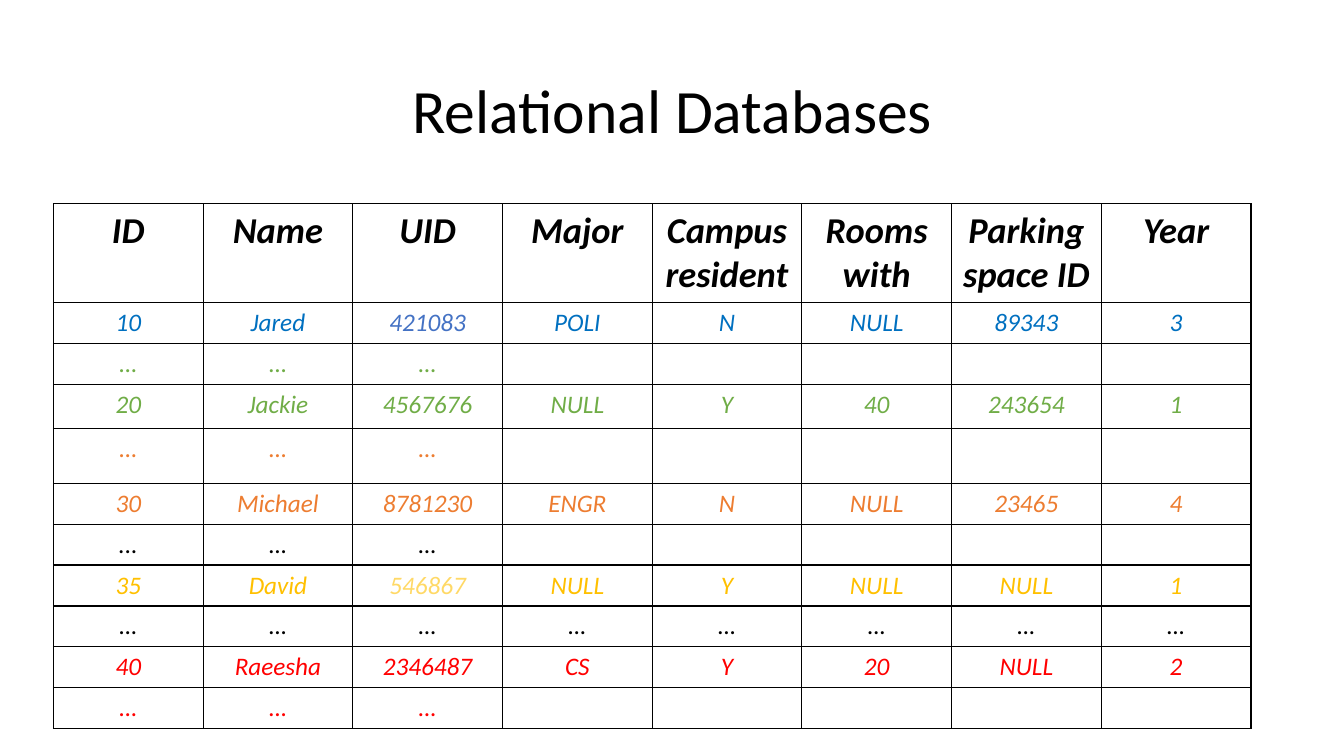
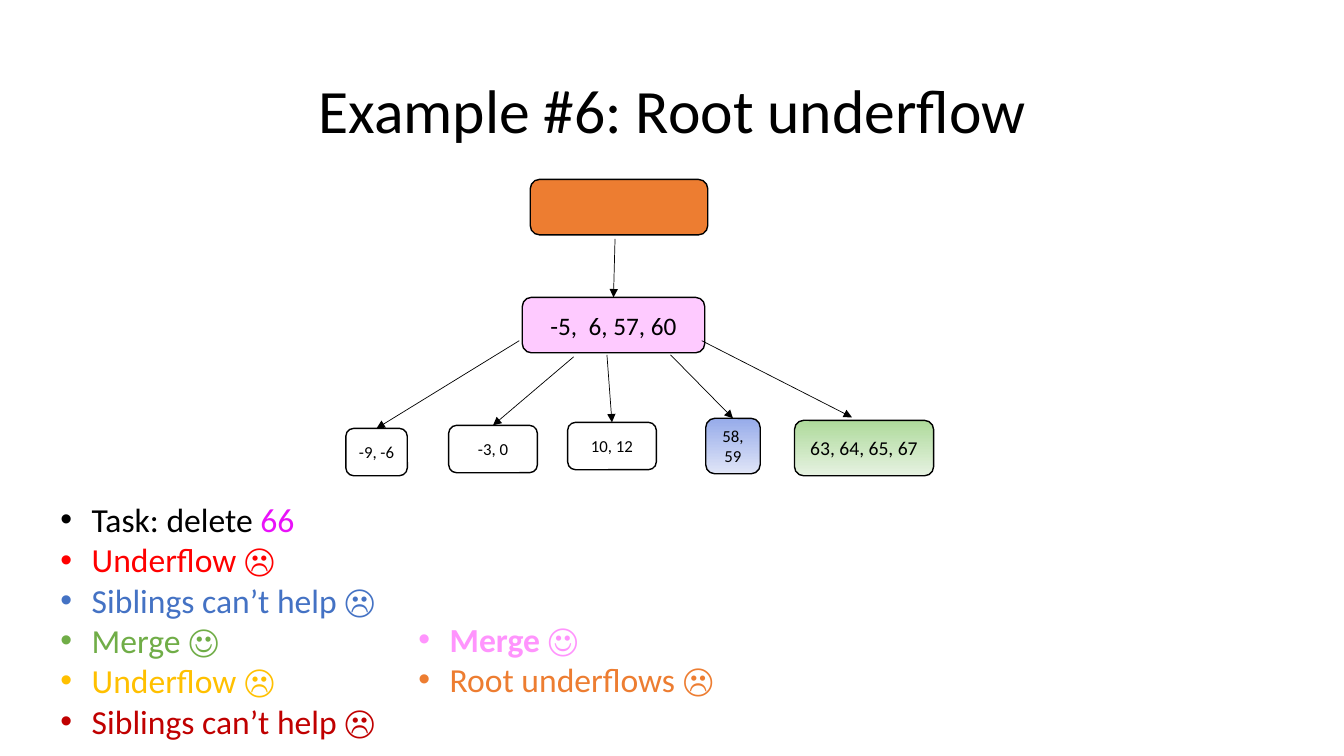
from dataclasses import dataclass
from lxml.etree import SubElement as Sub
from pptx import Presentation
from pptx.dml.color import RGBColor as Rgb
from pptx.enum.shapes import MSO_CONNECTOR as Conn, MSO_SHAPE as Geo
from pptx.enum.text import MSO_ANCHOR as Anchor, MSO_AUTO_SIZE as Auto, PP_ALIGN as Align
from pptx.oxml import parse_xml
from pptx.oxml.ns import nsdecls, qn
from pptx.util import Inches, Pt


@dataclass(frozen=True)
class Theme:
    font: str = "Calibri"
    black: str = "000000"
    sky: str = "0070C0"
    blue: str = "4472C4"
    green: str = "70AD47"
    orange: str = "ED7D31"
    gold: str = "FFC000"
    pale: str = "FFD966"
    red: str = "FF0000"
    dark: str = "C00000"
    pink: str = "FF94FD"
    rose: str = "FECAFF"
    vivid: str = "E911F9"
    fade_blue: tuple = ("96ABEA", "E0E5F7")
    fade_green: tuple = ("AEDA9B", "E6F2E1")
    title: int = 44
    head: int = 26
    list: int = 24
    body: int = 18
    leaf: int = 14
    small: int = 12


T = Theme()


def put(par, text, size, color, bold=False, italic=False):
    """Add one formatted run to a paragraph."""
    run = par.add_run()
    run.text = text
    font = run.font
    font.name, font.size = T.font, Pt(size)
    font.bold, font.italic = bold, italic
    font.color.rgb = Rgb.from_string(color)


def box(*vals):
    """Turn inches into lengths."""
    return [Inches(val) for val in vals]


deck = Presentation()
deck.slide_width, deck.slide_height = box(13.33, 7.5)

# Slides and their titles: title only, then title with two lists
pages = []
for num, text in ((5, "Relational Databases"), (3, "Example #6: Root underflow")):
    page = deck.slides.add_slide(deck.slide_layouts[num])
    title = page.shapes.title
    title.left, title.top, title.width, title.height = box(0.92, 0.4, 11.5, 1.45)
    title.text_frame.vertical_anchor = Anchor.MIDDLE
    par = title.text_frame.paragraphs[0]
    par.alignment, par.line_spacing = Align.CENTER, 0.9
    put(par, text, T.title, T.black)
    pages.append(page)
data, tree = pages

# Student table: colour and cells of each row
dots = ["…"] * 3
rows = [
    (T.black, ["ID", "Name", "UID", "Major", "Campus resident", "Rooms with",
               "Parking space ID", "Year"]),
    (T.sky, ["10", "Jared", "421083", "POLI", "N", "NULL", "89343", "3"]),
    (T.green, dots),
    (T.green, ["20", "Jackie", "4567676", "NULL", "Y", "40", "243654", "1"]),
    (T.orange, dots),
    (T.orange, ["30", "Michael", "8781230", "ENGR", "N", "NULL", "23465", "4"]),
    (T.black, ["...", "…", "…"]),
    (T.gold, ["35", "David", "546867", "NULL", "Y", "NULL", "NULL", "1"]),
    (T.black, ["…"] * 8),
    (T.red, ["40", "Raeesha", "2346487", "CS", "Y", "20", "NULL", "2"]),
    (T.red, dots),
]
tints = {(1, 2): T.blue, (7, 2): T.pale}
highs = {0: 0.98, 3: 0.44, 4: 0.54}
grid = data.shapes.add_table(len(rows), 8, *box(0.53, 2.02, 11.88, 5.19)).table
grid.first_row = grid.horz_banding = False
for col in grid.columns:
    col.width = Inches(11.88 / 8)
for r, (color, texts) in enumerate(rows):
    grid.rows[r].height = Inches(highs.get(r, 0.405))
    for c, cell in enumerate(grid.rows[r].cells):
        cell.fill.background()
        props = cell._tc.get_or_add_tcPr()
        for i, side in enumerate(("lnL", "lnR", "lnT", "lnB")):
            props.insert(i, parse_xml(
                f'<a:{side} {nsdecls("a")} w="{Pt(1)}"><a:solidFill>'
                f'<a:srgbClr val="{T.black}"/></a:solidFill></a:{side}>'))
        if c < len(texts):
            par = cell.text_frame.paragraphs[0]
            par.alignment = Align.CENTER
            put(par, texts[c], T.body if r else T.head,
                tints.get((r, c), color), bold=r == 0, italic=True)

# Tree nodes: place, fill, text, size
nodes = {
    "root": ((5.26, 1.78, 1.76, 0.55), T.orange, "", T.body),
    "mid": ((5.18, 2.95, 1.81, 0.55), T.rose, "-5,  6, 57, 60", T.body),
    "leaf1": ((3.43, 4.25, 0.61, 0.47), None, "-9, -6", T.small),
    "leaf2": ((4.45, 4.22, 0.88, 0.47), None, "-3, 0", T.small),
    "leaf3": ((5.63, 4.19, 0.88, 0.47), None, "10, 12", T.small),
    "leaf4": ((7, 4.15, 0.54, 0.55), T.fade_blue, "58, 59", T.small),
    "leaf5": ((7.88, 4.17, 1.38, 0.55), T.fade_green, "63, 64, 65, 67", T.leaf),
}
made = {}
for name, (area, fill, text, size) in nodes.items():
    node = made[name] = tree.shapes.add_shape(Geo.ROUNDED_RECTANGLE, *box(*area))
    node.shadow.inherit = False
    node.line.color.rgb, node.line.width = Rgb.from_string(T.black), Pt(1)
    if fill is None:
        node.fill.background()
    elif isinstance(fill, tuple):
        node.fill.gradient()
        node.fill.gradient_angle = 270
        for stop, color, pos in zip(node.fill.gradient_stops, fill, (0, 1)):
            stop.color.rgb, stop.position = Rgb.from_string(color), pos
    else:
        node.fill.solid()
        node.fill.fore_color.rgb = Rgb.from_string(fill)
    if text:
        frame = node.text_frame
        frame.word_wrap, frame.vertical_anchor = True, Anchor.MIDDLE
        par = frame.paragraphs[0]
        par.alignment = Align.CENTER
        put(par, text, size, T.black)

# Arrows: start, end, node joined at its top
arrows = [
    ((6.1, 2.37), (6.09, 2.95), "mid"),
    ((5.15, 3.38), (3.74, 4.25), "leaf1"),
    ((5.69, 3.54), (4.93, 4.23), "leaf2"),
    ((6.02, 3.52), (6.07, 4.19), "leaf3"),
    ((6.65, 3.52), (7.27, 4.15), "leaf4"),
    ((6.96, 3.38), (8.45, 4.14), None),
]
for start, end, goal in arrows:
    arrow = tree.shapes.add_connector(Conn.STRAIGHT, *box(*start, *end))
    arrow.line.color.rgb, arrow.line.width = Rgb.from_string(T.black), Pt(0.5)
    Sub(arrow.line._get_or_add_ln(), qn("a:tailEnd"), type="triangle")
    Sub(arrow._element.spPr, qn("a:effectLst"))
    if goal:
        arrow.end_connect(made[goal], 0)

# Step lists: each item is a row of runs (text, colour, bold)
lists = [
    (1, (0.5, 4.9, 3.61, 2.52), [
        [("Task: delete ", T.black, False), ("66", T.vivid, False)],
        [("Underflow ☹", T.red, False)],
        [("Siblings can’t help ☹", T.blue, False)],
        [("Merge ☺", T.green, False)],
        [("Underflow ☹", T.gold, False)],
        [("Siblings can’t help ☹", T.dark, False)],
    ]),
    (2, (4.05, 6.09, 3.61, 0.91), [
        [("Merge ", T.pink, True), ("☺", T.pink, False)],
        [("Root underflows ☹", T.orange, False)],
    ]),
]
for slot, area, items in lists:
    body = tree.placeholders[slot]
    body.left, body.top, body.width, body.height = box(*area)
    frame = body.text_frame
    frame.word_wrap, frame.auto_size = True, Auto.SHAPE_TO_FIT_TEXT
    for i, runs in enumerate(items):
        par = frame.add_paragraph() if i else frame.paragraphs[0]
        par.space_before = Pt(0)
        props = par._p.get_or_add_pPr()
        props.set("marL", str(Inches(0.31)))
        props.set("indent", str(-Inches(0.31)))
        Sub(props, qn("a:buFont"), typeface="Arial")
        Sub(props, qn("a:buChar"), char="•")
        for text, color, bold in runs:
            put(par, text, T.list, color, bold)

deck.save("out.pptx")
